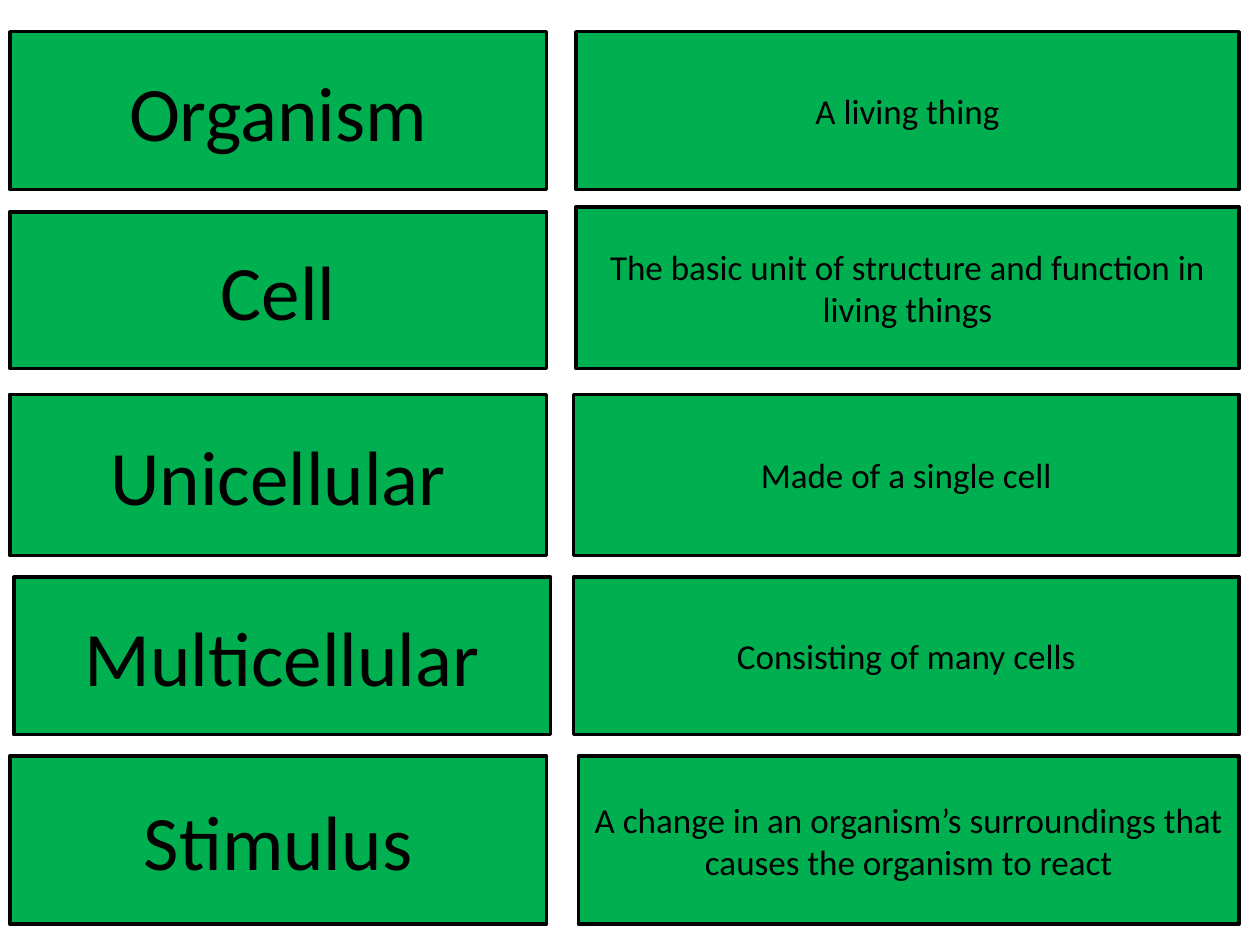
from dataclasses import dataclass
from typing import NamedTuple

from pptx import Presentation
from pptx.dml.color import RGBColor
from pptx.enum.shapes import MSO_SHAPE
from pptx.enum.text import MSO_ANCHOR, PP_ALIGN
from pptx.util import Cm, Pt


@dataclass(frozen=True)
class Theme:
    card: RGBColor = RGBColor(0x00, 0xB0, 0x50)
    ink: RGBColor = RGBColor(0x00, 0x00, 0x00)
    font: str = "Calibri"
    term_size: int = 44
    definition_size: int = 20
    outline: int = 2


class Box(NamedTuple):
    """A rectangle in centimetres."""
    left: float
    top: float
    width: float
    height: float


class Entry(NamedTuple):
    """A glossary row; its offsets are measured from the row's top left corner."""
    term: str
    definition: str
    top: float
    height: float
    definition_offset: float
    left: float = 0.2
    term_offset: float = 0


THEME = Theme()
RIGHT_EDGE = 24.98
TERM_WIDTH = 10.82
ENTRIES = [
    Entry("Organism", "A living thing", 0.64, 3.18, 11.41),
    Entry("Cell", "The basic unit of structure and function in living things",
          4.17, 3.26, 11.41, term_offset=0.1),
    Entry("Unicellular", "Made of a single cell", 7.95, 3.25, 11.36),
    Entry("Multicellular", "Consisting of many cells", 11.63, 3.18, 11.28, left=0.28),
    Entry("Stimulus",
          "A change in an organism’s surroundings that causes the organism to react",
          15.24, 3.39, 11.46),
]


def add_card(slide, box, text, size):
    shape = slide.shapes.add_shape(
        MSO_SHAPE.FLOWCHART_PROCESS, *(Cm(length) for length in box))
    shape.shadow.inherit = False
    shape.fill.solid()
    shape.fill.fore_color.rgb = THEME.card
    shape.line.color.rgb = THEME.ink
    shape.line.width = Pt(THEME.outline)

    text_frame = shape.text_frame
    text_frame.word_wrap = True
    text_frame.vertical_anchor = MSO_ANCHOR.MIDDLE
    text_frame.text = text
    paragraph = text_frame.paragraphs[0]
    paragraph.alignment = PP_ALIGN.CENTER
    font = paragraph.runs[0].font
    font.name = THEME.font
    font.size = Pt(size)
    font.color.rgb = THEME.ink


def add_entry(slide, box, entry):
    """Place the term on the left of the box and its definition on the right."""
    term_box = Box(box.left, box.top + entry.term_offset,
                   TERM_WIDTH, box.height - entry.term_offset)
    definition_box = Box(box.left + entry.definition_offset, box.top,
                         box.width - entry.definition_offset, box.height)
    add_card(slide, term_box, entry.term, THEME.term_size)
    add_card(slide, definition_box, entry.definition, THEME.definition_size)


def main():
    presentation = Presentation()
    presentation.slide_width = Cm(25.4)
    presentation.slide_height = Cm(19.05)
    slide = presentation.slides.add_slide(presentation.slide_layouts[6])
    for entry in ENTRIES:
        box = Box(entry.left, entry.top, RIGHT_EDGE - entry.left, entry.height)
        add_entry(slide, box, entry)
    presentation.save("out.pptx")


if __name__ == "__main__":
    main()
